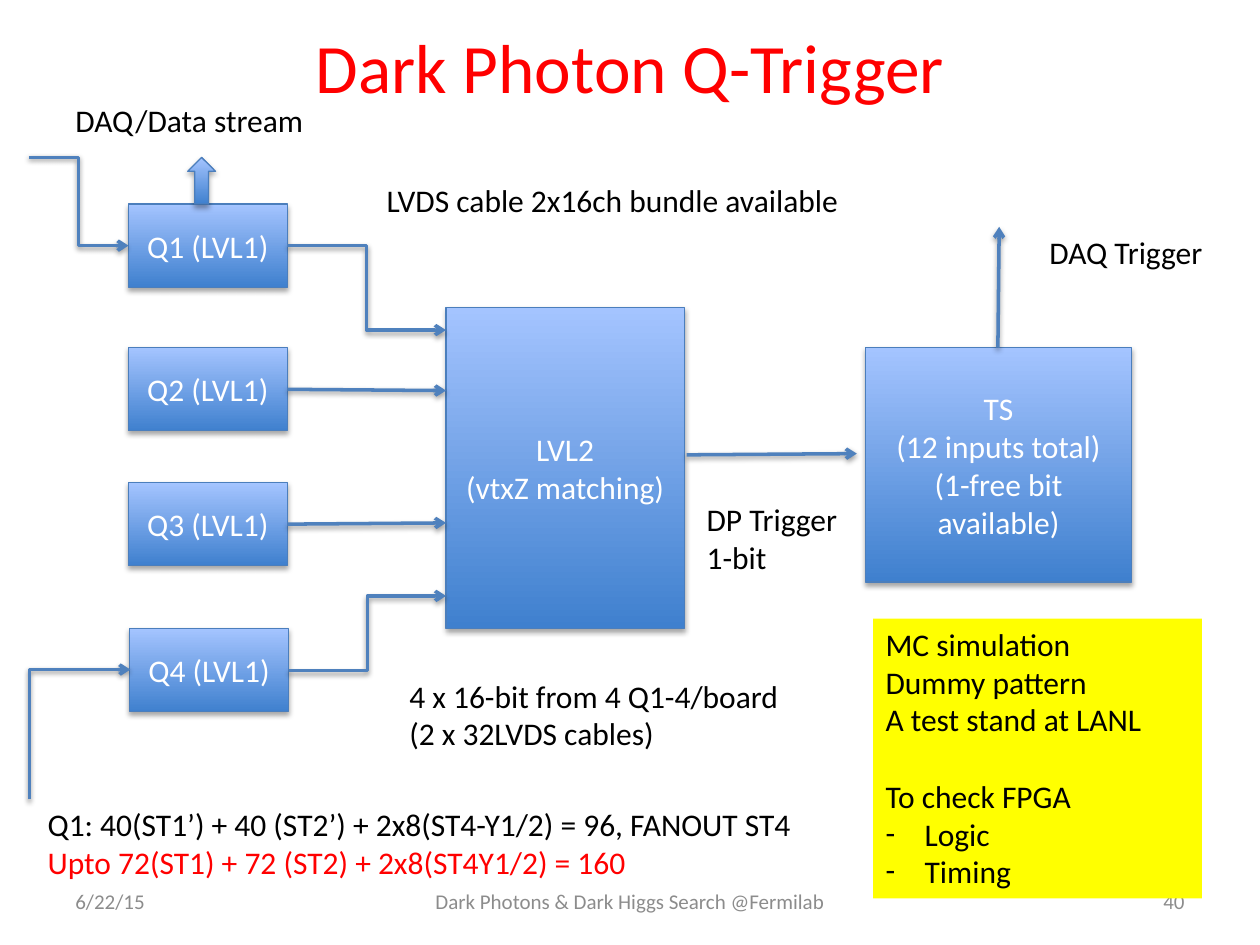
from lxml import etree
from pptx import Presentation
from pptx.dml.color import RGBColor
from pptx.enum.shapes import MSO_CONNECTOR, MSO_SHAPE
from pptx.enum.text import MSO_ANCHOR, PP_ALIGN
from pptx.oxml.ns import qn
from pptx.util import Pt

PX = 9144  # 100 px to the inch
STRAIGHT, ELBOW = MSO_CONNECTOR.STRAIGHT, MSO_CONNECTOR.ELBOW
RECT, UP_ARROW = MSO_SHAPE.RECTANGLE, MSO_SHAPE.UP_ARROW
TOP, MIDDLE = MSO_ANCHOR.TOP, MSO_ANCHOR.MIDDLE
LEFT, CENTER, RIGHT = PP_ALIGN.LEFT, PP_ALIGN.CENTER, PP_ALIGN.RIGHT

FONT = "Calibri"
BLACK = RGBColor(0x00, 0x00, 0x00)
WHITE = RGBColor(0xFF, 0xFF, 0xFF)
RED = RGBColor(0xFF, 0x00, 0x00)
YELLOW = RGBColor(0xFF, 0xFF, 0x00)
GRAY = RGBColor(0x8C, 0x8C, 0x8C)
BLUE_DARK = RGBColor(0x3F, 0x80, 0xCE)
BLUE_LIGHT = RGBColor(0xA4, 0xC4, 0xFF)
BLUE_EDGE = RGBColor(0x4B, 0x7E, 0xBC)
BLUE_WIRE = RGBColor(0x4F, 0x81, 0xBD)


def emu(*lengths):
    return [n * PX for n in lengths]


def add_shadow(effects, dist, alpha):
    shadow = etree.SubElement(effects, qn("a:outerShdw"), blurRad=str(Pt(3.1)),
                              dist=str(Pt(dist)), dir="5400000", rotWithShape="0")
    color = etree.SubElement(shadow, qn("a:srgbClr"), val="000000")
    etree.SubElement(color, qn("a:alpha"), val=str(alpha * 1000))


def write(sp, lines, color=BLACK, size=18, align=LEFT, anchor=TOP, wrap=True):
    """Fill a shape with one paragraph per line; a line is text or (text, colour)."""
    tf = sp.text_frame
    tf.word_wrap = wrap
    tf.vertical_anchor = anchor
    for i, line in enumerate(lines):
        text, ink = (line, color) if isinstance(line, str) else line
        p = tf.paragraphs[0] if i == 0 else tf.add_paragraph()
        p.alignment = align
        r = p.add_run()
        r.text = text
        r.font.name = FONT
        r.font.size = Pt(size)
        r.font.color.rgb = ink
    return tf


def label(s, box, *lines, **style):
    write(s.shapes.add_textbox(*emu(*box)), lines, **style)


def block(s, box, *lines, kind=RECT):
    sp = s.shapes.add_shape(kind, *emu(*box))
    sp.fill.gradient()
    sp.fill.gradient_angle = 90
    for stop, color in zip(sp.fill.gradient_stops, (BLUE_DARK, BLUE_LIGHT)):
        stop.color.rgb = color
    sp.line.color.rgb = BLUE_EDGE
    sp.line.width = Pt(0.75)
    sp.shadow.inherit = False
    add_shadow(sp._element.spPr.find(qn("a:effectLst")), 1.8, 35)
    write(sp, lines, WHITE, align=CENTER, anchor=MIDDLE)


def wire(s, kind, *ends):
    """Arrow from (x1, y1) to (x2, y2)."""
    cxn = s.shapes.add_connector(kind, *emu(*ends))
    cxn.line.color.rgb = BLUE_WIRE
    cxn.line.width = Pt(2)
    etree.SubElement(cxn.line._get_or_add_ln(), qn("a:tailEnd"), type="arrow")
    spPr = cxn._element.spPr
    add_shadow(etree.SubElement(spPr, qn("a:effectLst")), 1.6, 38)
    return cxn


def corner_wire(s, x1, y1, x2, y2):
    """Arrow that runs up from its start, then right to its end."""
    w, h = y1 - y2, x2 - x1
    cx, cy = (x1 + x2) // 2, (y1 + y2) // 2
    left, top = cx - w // 2, cy - h // 2
    cxn = wire(s, ELBOW, left + w, top + h, left, top)
    spPr = cxn._element.spPr
    spPr.find(qn("a:xfrm")).set("rot", "5400000")
    spPr.find(qn("a:prstGeom")).set("prst", "bentConnector2")


def header(s, box):
    label(s, box, "Dark Photon Q-Trigger", color=RED, size=39.6,
          align=CENTER, anchor=MIDDLE)


def footer(s, box):
    x, y, w, h = box
    style = dict(color=GRAY, size=12, anchor=MIDDLE)
    label(s, (x, y, 233, h), "6/22/15", **style)
    label(s, (x + 233, y, w - 466, h), "Dark Photons & Dark Higgs Search @Fermilab",
          align=CENTER, **style)
    label(s, (x + w - 233, y, 233, h), "40", align=RIGHT, **style)


def level_one(s, box):
    """The four Q blocks with their inputs and the data stream."""
    x, y, w, h = box
    rows = ((0, 0), (0, 114), (0, 221), (1, 337))
    for n, (dx, dy) in enumerate(rows, 1):
        block(s, (x + dx, y + dy, w, 66), f"Q{n} (LVL1)")
    wire(s, ELBOW, x - 79, y - 37, x, y + 33)
    corner_wire(s, x - 79, y + h + 70, x + 1, y + 370)
    block(s, (x + 47, y - 37, 22, 37), kind=UP_ARROW)
    label(s, (x - 52, y - 87, 203, 40), "DAQ/Data stream", wrap=False)


def level_two(s, box):
    """The matching block with the four wires that feed it."""
    x, y, w, h = box
    block(s, box, "LVL2", "(vtxZ matching)")
    wire(s, ELBOW, x - 126, y - 49, x, y + 18)
    wire(s, STRAIGHT, x - 126, y + 65, x, y + 66)
    wire(s, STRAIGHT, x - 126, y + 172, x, y + 171)
    wire(s, ELBOW, x - 125, y + 288, x, y + 229)
    label(s, (x - 57, y - 105, 385, 40), "LVDS cable 2x16ch bundle available",
          wrap=False)
    label(s, (x - 39, y + 288, 322, 71), "4 x 16-bit from 4 Q1-4/board",
          "(2 x 32LVDS cables)", wrap=False)


def trigger_supervisor(s, box):
    x, y, w, h = box
    block(s, box, "TS", "(12 inputs total)", "(1-free bit available)")
    wire(s, STRAIGHT, x - 142, y + 85, x - 7, y + 84)
    label(s, (x - 136, y + 116, 127, 71), "DP Trigger", "1-bit", wrap=False)
    wire(s, STRAIGHT, x + 105, y, x + 106, y - 96)
    label(s, (x + 136, y - 96, 145, 40), "DAQ Trigger", wrap=False)


def input_counts(s, box):
    label(s, box, "Q1: 40(ST1’) + 40 (ST2’) + 2x8(ST4-Y1/2) = 96, FANOUT ST4",
          ("Upto 72(ST1) + 72 (ST2) + 2x8(ST4Y1/2) = 160", RED))


def to_do(s, box):
    sp = s.shapes.add_textbox(*emu(*box))
    sp.fill.solid()
    sp.fill.fore_color.rgb = YELLOW
    tf = write(sp, ("MC simulation", "Dummy pattern", "A test stand at LANL",
                    "To check FPGA", "Logic", "Timing"))
    tf.paragraphs[3].space_before = Pt(22)
    for p in tf.paragraphs[4:]:
        pPr = p._p.get_or_add_pPr()
        pPr.set("marL", str(31 * PX))
        pPr.set("indent", str(-31 * PX))
        etree.SubElement(pPr, qn("a:buFont"), typeface=FONT)
        etree.SubElement(pPr, qn("a:buChar"), char="-")


def main():
    prs = Presentation()
    prs.slide_width, prs.slide_height = emu(1000, 750)
    s = prs.slides.add_slide(prs.slide_layouts[6])
    header(s, (50, 11, 900, 83))
    footer(s, (50, 695, 900, 40))
    level_one(s, (102, 162, 126, 403))
    level_two(s, (354, 244, 189, 255))
    trigger_supervisor(s, (687, 276, 211, 186))
    input_counts(s, (28, 634, 650, 101))
    to_do(s, (693, 491, 261, 222))
    prs.save("out.pptx")


if __name__ == "__main__":
    main()
